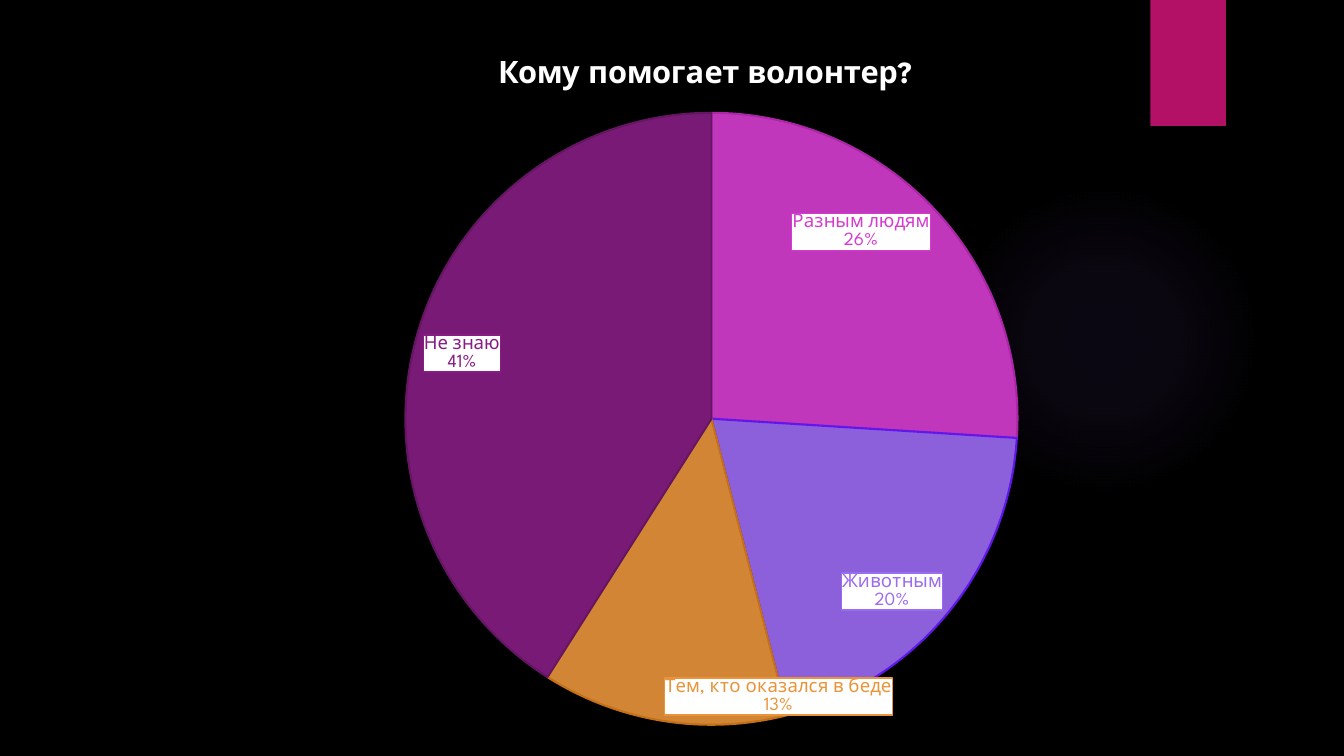
from lxml.etree import SubElement
from pptx import Presentation
from pptx.chart.data import CategoryChartData
from pptx.dml.color import RGBColor
from pptx.enum.chart import XL_CHART_TYPE, XL_LABEL_POSITION
from pptx.enum.shapes import MSO_SHAPE
from pptx.oxml import parse_xml
from pptx.oxml.ns import nsdecls, qn
from pptx.util import Inches, Pt

BLACK = RGBColor(0x00, 0x00, 0x00)
WHITE = RGBColor(0xFF, 0xFF, 0xFF)
RASPBERRY = RGBColor(0xB3, 0x11, 0x66)
PINK = RGBColor(0xD5, 0x3D, 0xD0)
VIOLET = RGBColor(0x9B, 0x6B, 0xF2)
ORANGE = RGBColor(0xE9, 0x94, 0x3A)
PURPLE = RGBColor(0x87, 0x1D, 0x84)
PINK_EDGE = RGBColor(0xAC, 0x26, 0xA8)
VIOLET_EDGE = RGBColor(0x61, 0x17, 0xEB)
ORANGE_EDGE = RGBColor(0xC4, 0x70, 0x16)
PURPLE_EDGE = RGBColor(0x65, 0x16, 0x63)

FONT = "League Spartan"
WIDTH, HEIGHT = Inches(13.33), Inches(7.5)
TITLE = "Кому помогает волонтер?"
ANSWERS = [
    ("Разным людям", 26, PINK, PINK_EDGE),
    ("Животным", 20, VIOLET, VIOLET_EDGE),
    ("Тем, кто оказался в беде", 13, ORANGE, ORANGE_EDGE),
    ("Не знаю", 41, PURPLE, PURPLE_EDGE),
]
PIE_AREA = {"x": 0.26, "y": 0.11, "w": 0.49, "h": 0.87}
LABEL_PARTS = {"c:showVal": "0", "c:showCatName": "1", "c:showPercent": "1"}
GLOW_STOPS = [(0, 7), (36, 6), (69, 0)]


def format_font(font, **values):
    """Set the chart font name and the given font values."""
    for name, value in {"name": FONT, **values}.items():
        setattr(font, name, value)


def add_block(s, kind, left, top, width, height, color):
    """Add a flat shape without outline or shadow."""
    sp = s.shapes.add_shape(kind, left, top, width, height)
    sp.shadow.inherit = False
    sp.line.fill.background()
    sp.fill.solid()
    sp.fill.fore_color.rgb = color
    return sp


def add_glow(s, left, top, size, color):
    """Add a circle that fades out from its centre."""
    sp = add_block(s, MSO_SHAPE.OVAL, left, top, size, size, color)
    stops = "".join(
        f'<a:gs pos="{pos * 1000}"><a:srgbClr val="{color}">'
        f'<a:alpha val="{alpha * 1000}"/></a:srgbClr></a:gs>'
        for pos, alpha in GLOW_STOPS
    )
    gradient = parse_xml(
        f'<a:gradFill {nsdecls("a")}><a:gsLst>{stops}</a:gsLst><a:path path="circle">'
        '<a:fillToRect l="50000" t="50000" r="50000" b="50000"/></a:path></a:gradFill>'
    )
    sp_pr = sp.element.spPr
    sp_pr.replace(sp_pr.find(qn("a:solidFill")), gradient)


def set_plot_area(chart, area):
    """Place the pie by shares of the chart's size."""
    plot_area = chart.element.find(f".//{qn('c:plotArea')}")
    for old in plot_area.findall(qn("c:layout")):
        plot_area.remove(old)
    sizes = "".join(f'<c:{key} val="{share}"/>' for key, share in area.items())
    plot_area.insert(0, parse_xml(
        f'<c:layout {nsdecls("c")}><c:manualLayout><c:layoutTarget val="inner"/>'
        '<c:xMode val="edge"/><c:yMode val="edge"/>'
        f"{sizes}</c:manualLayout></c:layout>"
    ))


def format_slice(point, color, edge):
    """Colour one slice and the text of its label."""
    fill, line = point.format.fill, point.format.line
    fill.solid()
    fill.fore_color.rgb = color
    line.color.rgb = edge
    line.width = Pt(1.5)
    format_font(point.data_label.font, size=Pt(13.3))
    point.data_label.font.color.rgb = color
    point.data_label.position = XL_LABEL_POSITION.INSIDE_END


def box_label(label, color):
    """Give a label a white box and show its category and percentage."""
    label.find(qn("c:txPr")).addprevious(parse_xml(
        f'<c:spPr {nsdecls("c", "a")}>'
        f'<a:solidFill><a:srgbClr val="{WHITE}"/></a:solidFill>'
        f'<a:ln w="{Pt(1)}"><a:solidFill><a:srgbClr val="{color}"/></a:solidFill></a:ln>'
        "</c:spPr>"
    ))
    for tag, value in LABEL_PARTS.items():
        label.find(qn(tag)).set("val", value)
    SubElement(label, qn("c:separator")).text = "\n"


def add_pie(s, left, top, width, height):
    """Add the titled pie of answers."""
    data = CategoryChartData()
    data.categories = [answer[0] for answer in ANSWERS]
    data.add_series("Series 1", [answer[1] for answer in ANSWERS])
    chart = s.shapes.add_chart(XL_CHART_TYPE.PIE, left, top, width, height, data).chart
    chart.has_legend = False
    format_font(chart.font, size=Pt(10))
    chart.font.color.rgb = WHITE

    chart.has_title = True
    p = chart.chart_title.text_frame.paragraphs[0]
    r = p.add_run()
    r.text = TITLE
    format_font(r.font, size=Pt(22), bold=True)
    r.font.color.rgb = WHITE

    plot = chart.plots[0]
    plot.vary_by_categories = True
    set_plot_area(chart, PIE_AREA)
    series = plot.series[0]
    for i, (_, _, color, edge) in enumerate(ANSWERS):
        format_slice(series.points[i], color, edge)
    for name, value in {
        "show_value": False,
        "show_category_name": True,
        "show_percentage": True,
        "position": XL_LABEL_POSITION.INSIDE_END,
    }.items():
        setattr(series.data_labels, name, value)
    for label, answer in zip(chart.element.iter(qn("c:dLbl")), ANSWERS):
        box_label(label, answer[2])
    for color in chart.element.findall(
        f".//{qn('c:dPt')}/{qn('c:spPr')}/{qn('a:solidFill')}/{qn('a:srgbClr')}"
    ):
        SubElement(color, qn("a:alpha")).set("val", "90000")


def main():
    """Build the slide and save it."""
    prs = Presentation()
    prs.slide_width, prs.slide_height = WIDTH, HEIGHT
    s = prs.slides.add_slide(prs.slide_layouts[6])
    s.background.fill.solid()
    s.background.fill.fore_color.rgb = BLACK
    add_glow(s, Inches(9.41), Inches(1.83), Inches(3.08), VIOLET)
    add_block(s, MSO_SHAPE.RECTANGLE, Inches(11.41), 0, Inches(0.75), HEIGHT // 6, RASPBERRY)
    add_pie(s, Inches(0.8), Inches(0.34), Inches(12.39), Inches(7))
    prs.save("out.pptx")


if __name__ == "__main__":
    main()
